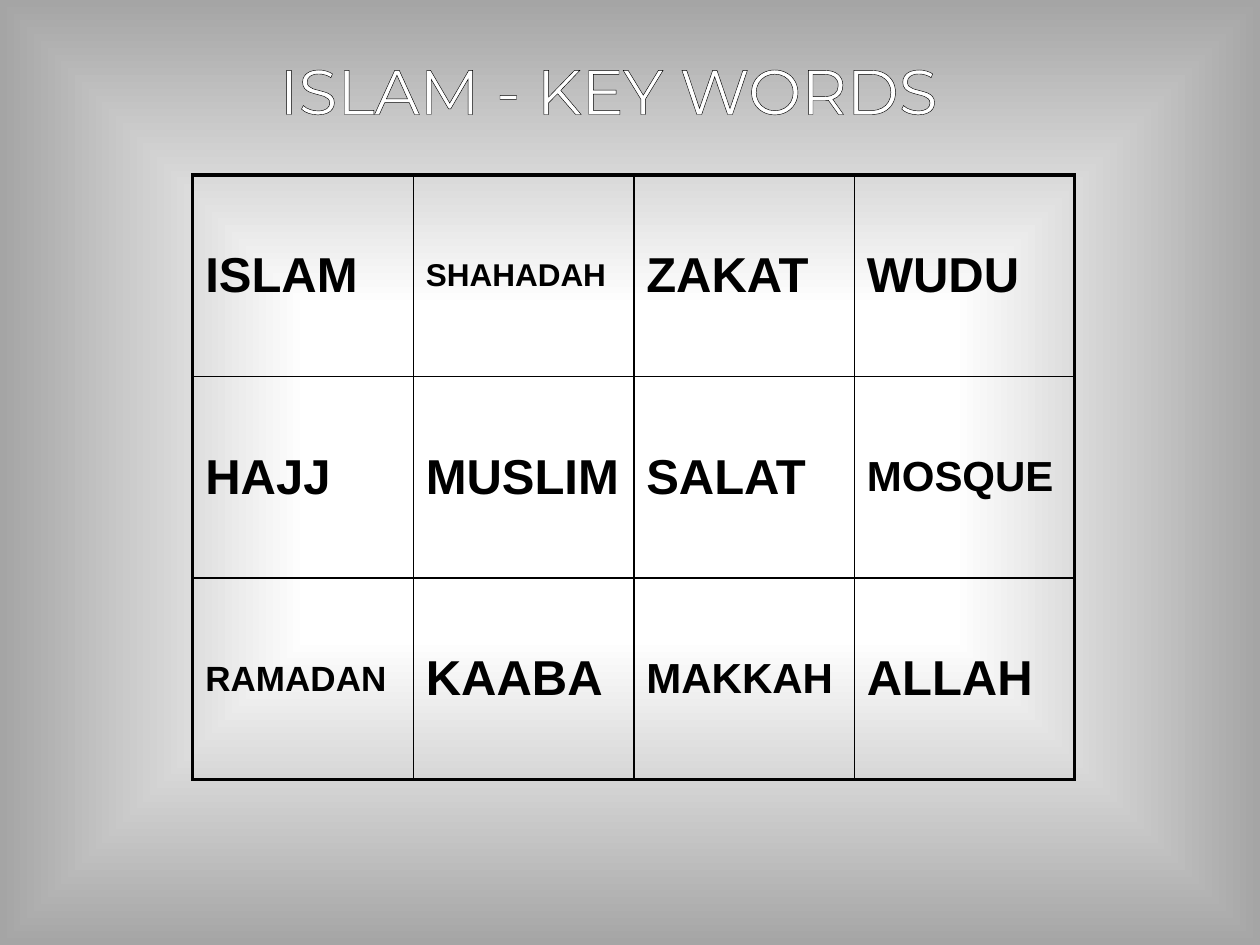
import dataclasses

import lxml.etree
import pptx
import pptx.dml.color
import pptx.enum.text
import pptx.oxml
import pptx.oxml.ns
import pptx.util

BLACK = pptx.dml.color.RGBColor(0x00, 0x00, 0x00)
WHITE = pptx.dml.color.RGBColor(0xFF, 0xFF, 0xFF)
GREY = pptx.dml.color.RGBColor(0xA5, 0xA5, 0xA5)

WIDTH, HEIGHT = pptx.util.Inches(10), pptx.util.Inches(7.5)
ROWS, COLS = 3, 4
INNER, OUTER = 1, 2.25  # border widths in points


@dataclasses.dataclass(frozen=True)
class Word:
    text: str
    size: float = 28


@dataclasses.dataclass(frozen=True)
class Box:
    """Place on the slide, as shares of its width and height."""
    x: float
    y: float
    w: float
    h: float

    def emu(self) -> tuple:
        return (round(self.x * WIDTH), round(self.y * HEIGHT),
                round(self.w * WIDTH), round(self.h * HEIGHT))


TITLE_BOX = Box(0.201, 0.048, 0.564, 0.095)
GRID_BOX = Box(0.153, 0.185, 0.7, 0.64)
WORDS = [
    Word("ISLAM"), Word("SHAHADAH", 18), Word("ZAKAT"), Word("WUDU"),
    Word("HAJJ"), Word("MUSLIM"), Word("SALAT"), Word("MOSQUE", 24),
    Word("RAMADAN", 20), Word("KAABA"), Word("MAKKAH", 24), Word("ALLAH"),
]


def element(tag: str, inner: str, attrs: str = "") -> lxml.etree._Element:
    ns = pptx.oxml.ns.nsdecls("a")
    return pptx.oxml.parse_xml(f"<a:{tag} {ns} {attrs}>{inner}</a:{tag}>")


def line(tag: str, points: float, color: pptx.dml.color.RGBColor) -> lxml.etree._Element:
    fill = f'<a:solidFill><a:srgbClr val="{color}"/></a:solidFill>'
    return element(tag, fill, f'w="{pptx.util.Pt(points)}"')


def add_run(p, text: str, color: pptx.dml.color.RGBColor, **formats):
    r = p.add_run()
    r.text = text
    for name, value in formats.items():
        setattr(r.font, name, value)
    r.font.color.rgb = color
    return r


def paint_background(s) -> None:
    """Rectangular gradient, white in the middle and grey at the edges."""
    s.background.fill.gradient()
    old = s.background._cSld.find(".//" + pptx.oxml.ns.qn("a:gradFill"))
    stops = "".join(f'<a:gs pos="{pos * 1000}"><a:srgbClr val="{color}"/></a:gs>'
                    for pos, color in ((0, WHITE), (35, WHITE), (100, GREY)))
    centre = " ".join(f'{side}="50000"' for side in "ltrb")
    new = element("gradFill", f'<a:gsLst>{stops}</a:gsLst><a:path path="rect">'
                              f'<a:fillToRect {centre}/></a:path>')
    old.getparent().replace(old, new)


def add_title(s, text: str) -> None:
    tf = s.shapes.add_textbox(*TITLE_BOX.emu()).text_frame
    tf.word_wrap = False
    p = tf.paragraphs[0]
    p.alignment = pptx.enum.text.PP_ALIGN.CENTER
    r = add_run(p, text, WHITE, name="Montserrat", size=pptx.util.Pt(36))
    r.font._element.insert(0, line("ln", 0.75, BLACK))


def fill_cell(cell, word: Word, row: int, col: int) -> None:
    cell.fill.background()
    cell.vertical_anchor = pptx.enum.text.MSO_ANCHOR.MIDDLE
    p = cell.text_frame.paragraphs[0]
    p._p.get_or_add_pPr().append(element("spcBef", '<a:spcPct val="20000"/>'))
    add_run(p, word.text, BLACK, name="Arial", size=pptx.util.Pt(word.size), bold=True)
    # Heavier lines on the outer edge of the grid
    edges = {"lnL": col == 0, "lnR": col == COLS - 1,
             "lnT": row == 0, "lnB": row == ROWS - 1}
    for i, (tag, outer) in enumerate(edges.items()):
        cell._tc.get_or_add_tcPr().insert(i, line(tag, OUTER if outer else INNER, BLACK))


def add_word_grid(s, words: list[Word]) -> None:
    table = s.shapes.add_table(ROWS, COLS, *GRID_BOX.emu()).table
    table.first_row = table.horz_banding = False
    for i, word in enumerate(words):
        row, col = divmod(i, COLS)
        fill_cell(table.cell(row, col), word, row, col)


def main() -> None:
    prs = pptx.Presentation()
    prs.slide_width, prs.slide_height = WIDTH, HEIGHT
    s = prs.slides.add_slide(prs.slide_layouts[6])
    paint_background(s)
    add_title(s, "ISLAM - KEY WORDS")
    add_word_grid(s, WORDS)
    prs.save("out.pptx")


if __name__ == "__main__":
    main()
